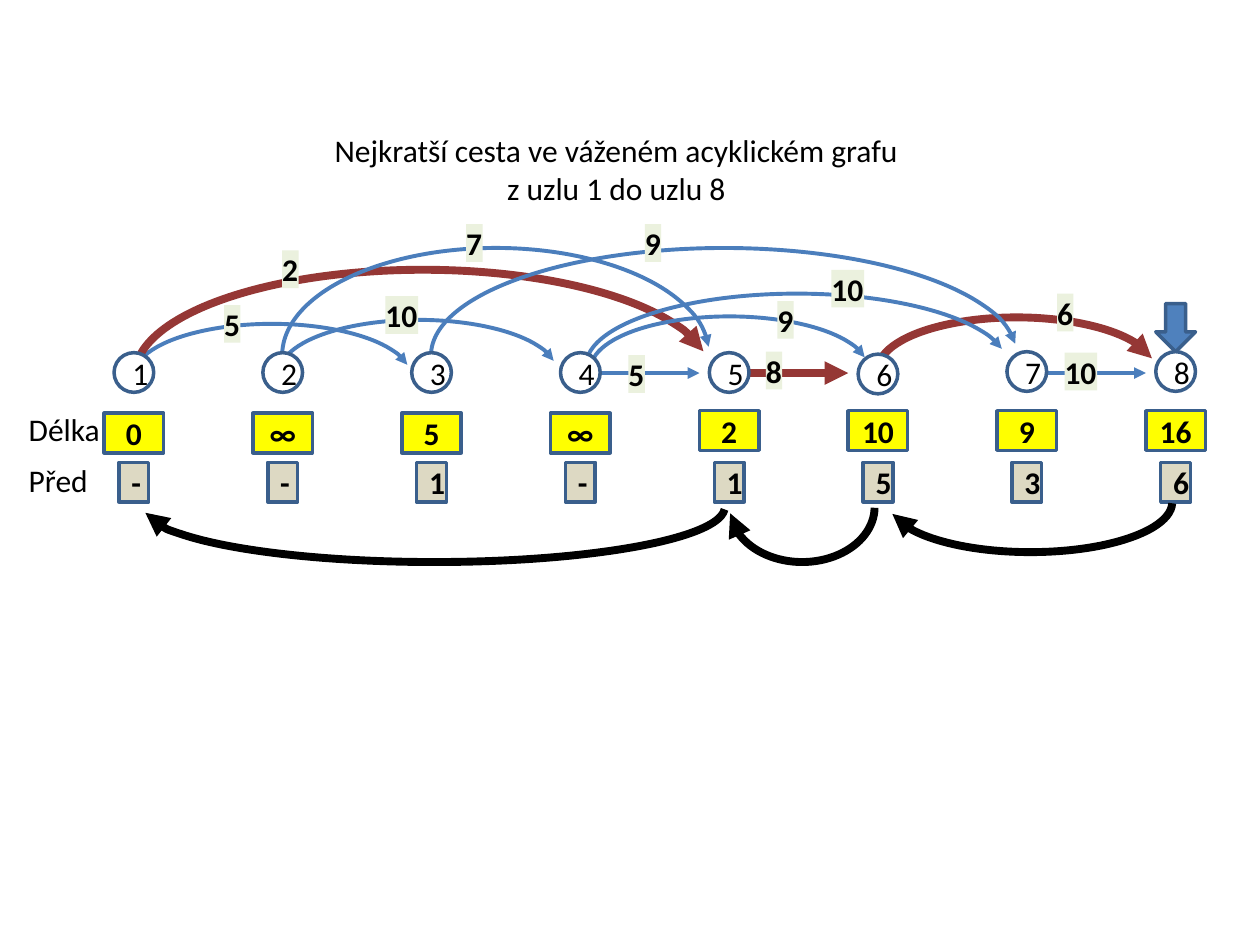
from lxml.etree import SubElement
from pptx import Presentation
from pptx.dml.color import RGBColor
from pptx.enum.shapes import MSO_CONNECTOR, MSO_SHAPE
from pptx.enum.text import MSO_ANCHOR, MSO_AUTO_SIZE, PP_ALIGN
from pptx.oxml.ns import qn
from pptx.util import Cm, Pt

BLACK = RGBColor(0x00, 0x00, 0x00)
WHITE = RGBColor(0xFF, 0xFF, 0xFF)
EDGE_BLUE = RGBColor(0x4B, 0x7E, 0xBC)
PATH_RED = RGBColor(0x95, 0x37, 0x35)
OUTLINE = RGBColor(0x3A, 0x5F, 0x8C)
POINTER_BLUE = RGBColor(0x4F, 0x81, 0xBD)
YELLOW = RGBColor(0xFF, 0xFF, 0x00)
BEIGE = RGBColor(0xDD, 0xD9, 0xC3)
PALE_GREEN = RGBColor(0xEB, 0xF1, 0xDE)

# Content; all lengths in cm
TITLE = ["Nejkratší cesta ve váženém acyklickém grafu", "z uzlu 1 do uzlu 8"]
ROW_LABELS = [("Před", 9.17, 1.73), ("Délka", 8.15, 1.96)]  # text, top, width

# node, distance, predecessor, node top, distance top
NODES = [
    ("1", "0", "-", 7.11, 8.33),
    ("2", "∞", "-", 7.11, 8.33),
    ("3", "5", "1", 7.11, 8.33),
    ("4", "∞", "-", 7.11, 8.33),
    ("5", "2", "1", 7.11, 8.28),
    ("6", "10", "5", 7.14, 8.28),
    ("7", "9", "3", 7.09, 8.28),
    ("8", "16", "6", 7.09, 8.28),
]
FIRST_CENTRE, NODE_STEP, NODE_SIZE, PREDECESSOR_TOP = 2.7, 3, 0.8, 9.32

BLUE_EDGE = (EDGE_BLUE, 2.25)
RED_EDGE = (PATH_RED, 4.5)
BACK_EDGE = (BLACK, 4.5)

# box (left, top, width, height), end angle, stroke
ARC_START, ARC_END, TALL_ARC_END, BACK_ARC_END = 108.25, 213.11, 214.65, 215.34
ARCS = [
    ((2.69, 6.53, 5.59, 2.11), ARC_END, BLUE_EDGE),
    ((2.72, 5.44, 11.61, 4.24), ARC_END, RED_EDGE),
    ((5.69, 5.0, 8.61, 4.32), TALL_ARC_END, BLUE_EDGE),
    ((17.7, 6.4, 5.59, 2.11), ARC_END, RED_EDGE),
    ((11.91, 6.38, 5.59, 2.11), ARC_END, BLUE_EDGE),
    ((8.69, 5.0, 11.81, 4.32), TALL_ARC_END, BLUE_EDGE),
    ((11.81, 5.92, 8.51, 2.92), ARC_END, BLUE_EDGE),
    ((5.64, 6.45, 5.59, 2.11), ARC_END, BLUE_EDGE),
]
BACK_ARCS = [
    ((17.91, 9.12, 5.72, 2.01), ARC_END, BACK_EDGE),
    ((14.71, 9.12, 2.92, 2.21), ARC_END, BACK_EDGE),
    ((2.9, 9.12, 11.71, 2.21), BACK_ARC_END, BACK_EDGE),
]
# edges to the next node: start node, stroke
STRAIGHT_EDGES = [(4, BLUE_EDGE), (5, RED_EDGE), (7, BLUE_EDGE)]
EDGE_Y = 7.52

WEIGHTS = [  # weight, left, top
    ("2", 5.69, 5.05), ("10", 7.77, 5.97), ("7", 9.4, 4.52), ("9", 13.0, 4.52),
    ("6", 21.31, 5.92), ("10", 16.76, 5.44), ("9", 15.67, 6.07),
    ("8", 15.44, 7.09), ("5", 12.67, 7.16), ("10", 21.46, 7.11),
    ("5", 4.52, 6.15),
]
DIGIT_WIDTH, WEIGHT_HEIGHT = 0.33, 0.76


def centre_x(node):
    return FIRST_CENTRE + (node - 1) * NODE_STEP


def write(frame, lines, align, bold=False):
    for index, line in enumerate(lines):
        paragraph = frame.add_paragraph() if index else frame.paragraphs[0]
        paragraph.alignment = align
        run = paragraph.add_run()
        run.text = line
        run.font.name = "Calibri"
        run.font.size = Pt(18)
        run.font.bold = bold
        run.font.color.rgb = BLACK


def add_box(slide, preset, box, fill, outline=OUTLINE):
    shape = slide.shapes.add_shape(preset, *map(Cm, box))
    shape.shadow.inherit = False
    shape.fill.solid()
    shape.fill.fore_color.rgb = fill
    if outline is None:
        shape.line.fill.background()
    else:
        shape.line.color.rgb = outline
        shape.line.width = Pt(2)
    return shape


def style_stroke(line, stroke):
    colour, width = stroke
    line.color.rgb = colour
    line.width = Pt(width)
    SubElement(line._get_or_add_ln(), qn("a:tailEnd"), type="triangle")


def add_arc(slide, box, end, stroke, rotation=0):
    arc = slide.shapes.add_shape(MSO_SHAPE.ARC, *map(Cm, box))
    arc.adjustments[0] = ARC_START
    arc.adjustments[1] = end
    arc.rotation = rotation
    arc.shadow.inherit = False
    arc.fill.background()
    style_stroke(arc.line, stroke)


def add_cell(slide, preset, centre, top, width, text, fill, bold):
    box = (centre - width / 2, top, width, NODE_SIZE)
    write(add_box(slide, preset, box, fill).text_frame, [text], PP_ALIGN.CENTER, bold)


def main():
    prs = Presentation()
    prs.slide_width, prs.slide_height = Cm(25.4), Cm(19.05)
    slide = prs.slides.add_slide(prs.slide_layouts[5])

    # Title
    title = slide.shapes.title
    title.left, title.top, title.width, title.height = map(Cm, (6.43, 2.51, 11.99, 1.8))
    title.text_frame.word_wrap = False
    title.text_frame.auto_size = MSO_AUTO_SIZE.NONE
    title.text_frame.vertical_anchor = MSO_ANCHOR.TOP
    write(title.text_frame, TITLE, PP_ALIGN.CENTER)

    # Graph edges
    for box, end, stroke in ARCS:
        add_arc(slide, box, end, stroke)
    for node, stroke in STRAIGHT_EDGES:
        start, stop = centre_x(node) + 0.4, centre_x(node + 1) - 0.6
        edge = slide.shapes.add_connector(
            MSO_CONNECTOR.STRAIGHT, Cm(start), Cm(EDGE_Y), Cm(stop), Cm(EDGE_Y))
        style_stroke(edge.line, stroke)
        SubElement(edge._element.spPr, qn("a:effectLst"))

    # Nodes with their distance and predecessor
    for number, (node, distance, predecessor, node_top, distance_top) in enumerate(NODES, 1):
        x = centre_x(number)
        add_cell(slide, MSO_SHAPE.OVAL, x, node_top, NODE_SIZE, node, WHITE, False)
        add_cell(slide, MSO_SHAPE.RECTANGLE, x, distance_top, 1.2, distance, YELLOW, True)
        add_cell(slide, MSO_SHAPE.RECTANGLE, x, PREDECESSOR_TOP, 0.6, predecessor, BEIGE, True)

    # Edge weights
    for weight, left, top in WEIGHTS:
        box = (left, top, DIGIT_WIDTH * len(weight), WEIGHT_HEIGHT)
        frame = add_box(slide, MSO_SHAPE.RECTANGLE, box, PALE_GREEN, None).text_frame
        frame.margin_left = frame.margin_right = frame.margin_top = frame.margin_bottom = 0
        frame.word_wrap = False
        frame.auto_size = MSO_AUTO_SIZE.SHAPE_TO_FIT_TEXT
        write(frame, [weight], PP_ALIGN.LEFT, True)

    # Row labels
    for label, top, width in ROW_LABELS:
        frame = slide.shapes.add_textbox(*map(Cm, (0.33, top, width, 1.02))).text_frame
        frame.word_wrap = False
        frame.auto_size = MSO_AUTO_SIZE.SHAPE_TO_FIT_TEXT
        write(frame, [label], PP_ALIGN.LEFT)

    # Pointer to the target node and the way back to the start
    pointer_box = (centre_x(len(NODES)) - NODE_SIZE / 2, 6.12, NODE_SIZE, 0.97)
    add_box(slide, MSO_SHAPE.DOWN_ARROW, pointer_box, POINTER_BLUE)
    for box, end, stroke in BACK_ARCS:
        add_arc(slide, box, end, stroke, rotation=180)

    prs.save("out.pptx")


if __name__ == "__main__":
    main()
